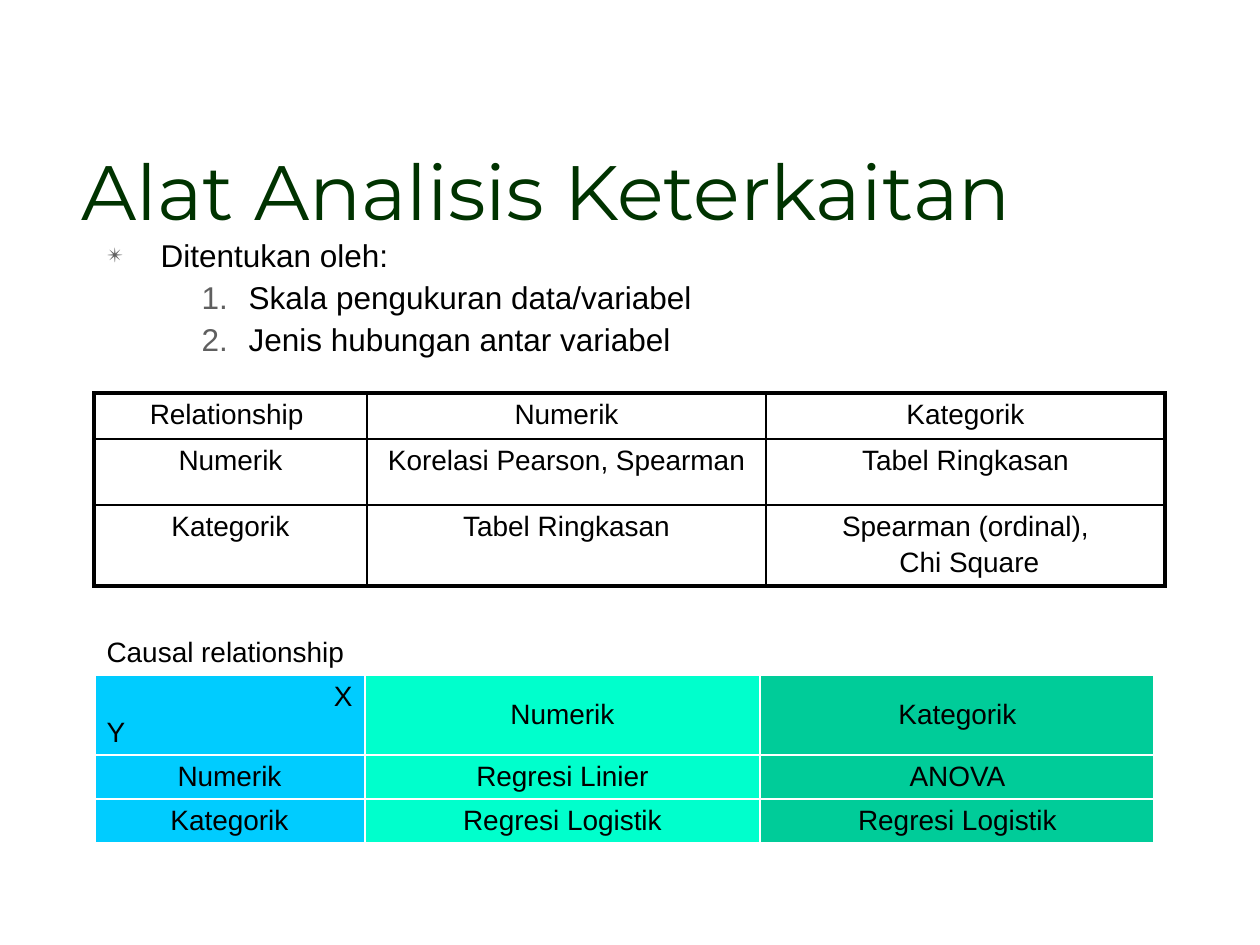
from dataclasses import dataclass

from lxml import etree
from pptx import Presentation
from pptx.dml.color import RGBColor
from pptx.enum.text import MSO_ANCHOR, MSO_AUTO_SIZE, PP_ALIGN
from pptx.oxml.ns import qn
from pptx.util import Emu, Pt

LEFT, CENTER, RIGHT = PP_ALIGN.LEFT, PP_ALIGN.CENTER, PP_ALIGN.RIGHT
TOP, MIDDLE, BOTTOM = MSO_ANCHOR.TOP, MSO_ANCHOR.MIDDLE, MSO_ANCHOR.BOTTOM
NO_AUTOFIT = MSO_AUTO_SIZE.NONE
EMU_PER_PX = 914400 / 126


@dataclass(frozen=True)
class Theme:
    """Colours, fonts and type sizes of the slide."""
    title_color: str = "003300"
    text_color: str = "000000"
    bullet_color: str = "5F5F5F"
    white: str = "FFFFFF"
    column_fills: tuple = ("00CCFF", "00FFCC", "00CC99")
    title_font: str = "Montserrat"
    text_font: str = "Arial"
    title_size: int = 44
    body_size: int = 18
    table_size: int = 16


def px(length):
    """Turn a length in px into EMU."""
    return Emu(round(length * EMU_PER_PX))


def apply(target, values):
    """Set each attribute named in a dict of format values."""
    for name, value in values.items():
        setattr(target, name, value)


def add_element(parent, tag, **attributes):
    """Append a DrawingML element."""
    return etree.SubElement(parent, qn(tag), attributes)


class SlideBuilder:
    """Holds the theme and the current slide."""

    def __init__(self, slide, theme):
        self.slide = slide
        self.theme = theme

    def place(self, shape, left, top, width, height):
        """Move and size a shape."""
        apply(shape, {"left": px(left), "top": px(top),
                      "width": px(width), "height": px(height)})

    def set_text(self, paragraph, text, size, color, font, **layout):
        """Fill one paragraph and format it."""
        paragraph.text = text
        apply(paragraph, layout)
        apply(paragraph.font, {"size": Pt(size), "name": font, "bold": False})
        paragraph.font.color.rgb = RGBColor.from_string(color)

    def title(self, text, box):
        """Fill the title placeholder."""
        theme, shape = self.theme, self.slide.shapes.title
        self.place(shape, *box)
        apply(shape.text_frame, {"auto_size": NO_AUTOFIT, "word_wrap": True,
                                 "vertical_anchor": BOTTOM})
        self.set_text(shape.text_frame.paragraphs[0], text, theme.title_size,
                      theme.title_color, theme.title_font, alignment=CENTER)

    def bullet(self, paragraph, margin, indent, marker, **attributes):
        """Give a paragraph its hanging indent and marker."""
        properties = paragraph._p.get_or_add_pPr()
        properties.set("marL", str(px(margin)))
        properties.set("indent", str(px(indent)))
        color = add_element(properties, "a:buClr")
        add_element(color, "a:srgbClr", val=self.theme.bullet_color)
        if marker == "a:buChar":
            add_element(properties, "a:buSzPct", val="65000")
        add_element(properties, marker, **attributes)

    def numbered_list(self, heading, items, box):
        """Fill the body placeholder with a heading and numbered items."""
        theme, shape = self.theme, self.slide.placeholders[1]
        self.place(shape, *box)
        frame = shape.text_frame
        apply(frame, {"auto_size": NO_AUTOFIT, "word_wrap": True})
        for index, text in enumerate([heading, *items]):
            paragraph = frame.add_paragraph() if index else frame.paragraphs[0]
            if index:
                self.bullet(paragraph, 142, -47, "a:buAutoNum", type="arabicPeriod")
            else:
                self.bullet(paragraph, 54, -54, "a:buChar", char="✴")
            self.set_text(paragraph, text, theme.body_size, theme.text_color,
                          theme.text_font, level=min(index, 1), line_spacing=0.9,
                          space_before=Pt(4.5 if index else 0))

    def borders(self, cell, color, widths):
        """Draw the four borders of a cell."""
        properties = cell._tc.get_or_add_tcPr()
        for side, width in widths.items():
            line = add_element(properties, f"a:ln{side}", w=str(Pt(width)))
            fill = add_element(line, "a:solidFill")
            add_element(fill, "a:srgbClr", val=color)

    def cell(self, cell, lines, anchor, fill):
        """Put aligned lines into a cell and fill it."""
        theme = self.theme
        if fill:
            cell.fill.solid()
            cell.fill.fore_color.rgb = RGBColor.from_string(fill)
        else:
            cell.fill.background()
        cell.vertical_anchor = anchor
        for index, (text, alignment) in enumerate(lines):
            frame = cell.text_frame
            paragraph = frame.add_paragraph() if index else frame.paragraphs[0]
            self.set_text(paragraph, text, theme.table_size, theme.text_color,
                          theme.text_font, alignment=alignment,
                          space_before=Pt(3 if index else 0))

    def table(self, rows, position, widths, heights, line_color, outer,
              anchor=TOP, fills=(None, None, None), caption=None):
        """Add a table, with an optional caption row merged across the top."""
        rows = [[caption, "", ""], *rows] if caption else rows
        shape = self.slide.shapes.add_table(
            len(rows), len(widths), *map(px, position), px(sum(widths)), px(sum(heights)))
        table = shape.table
        apply(table, {"first_row": False, "horz_banding": False})
        for column, width in zip(table.columns, widths):
            column.width = px(width)
        for row, height in zip(table.rows, heights):
            row.height = px(height)
        last_row, last_column = len(rows) - 1, len(widths) - 1
        for i, row in enumerate(rows):
            for j, content in enumerate(row):
                edges = {"L": j == 0, "R": j == last_column, "T": i == 0, "B": i == last_row}
                cell = table.cell(i, j)
                self.borders(cell, line_color, {
                    side: outer.get(side, 1) if edge else 1 for side, edge in edges.items()})
                is_caption = caption and i == 0
                if isinstance(content, str):
                    content = [(content, LEFT if is_caption else CENTER)]
                self.cell(cell, content, anchor, None if is_caption else fills[j])
        if caption:
            table.cell(0, 0).merge(table.cell(0, last_column))


def main():
    """Build and save the slide."""
    presentation = Presentation()
    apply(presentation, {"slide_width": px(1260), "slide_height": px(945)})
    theme = Theme()
    builder = SlideBuilder(presentation.slides.add_slide(presentation.slide_layouts[1]), theme)

    builder.title("Alat Analisis Keterkaitan", (32, 44, 1029, 198))
    builder.numbered_list(
        "Ditentukan oleh:",
        ["Skala pengukuran data/variabel", "Jenis hubungan antar variabel"],
        (94, 234, 1081, 111))
    builder.table(
        [["Relationship ", "Numerik", "Kategorik"],
         ["Numerik", "Korelasi Pearson, Spearman", "Tabel Ringkasan"],
         ["Kategorik", "Tabel Ringkasan",
          [("Spearman (ordinal),", CENTER), (" Chi Square", CENTER)]]],
        (94, 393), (273, 399, 399), (46, 66, 81), theme.text_color,
        dict.fromkeys("LRTB", 2.25))
    builder.table(
        [[[("X", RIGHT), ("Y", LEFT)], "Numerik", "Kategorik"],
         ["Numerik", "Regresi Linier", "ANOVA"],
         ["Kategorik", "Regresi Logistik", "Regresi Logistik"]],
        (94, 631), (271, 395, 395), (44, 80, 44, 44), theme.white,
        dict.fromkeys("LR", 3), MIDDLE, theme.column_fills, "Causal relationship")
    presentation.save("out.pptx")


if __name__ == "__main__":
    main()
